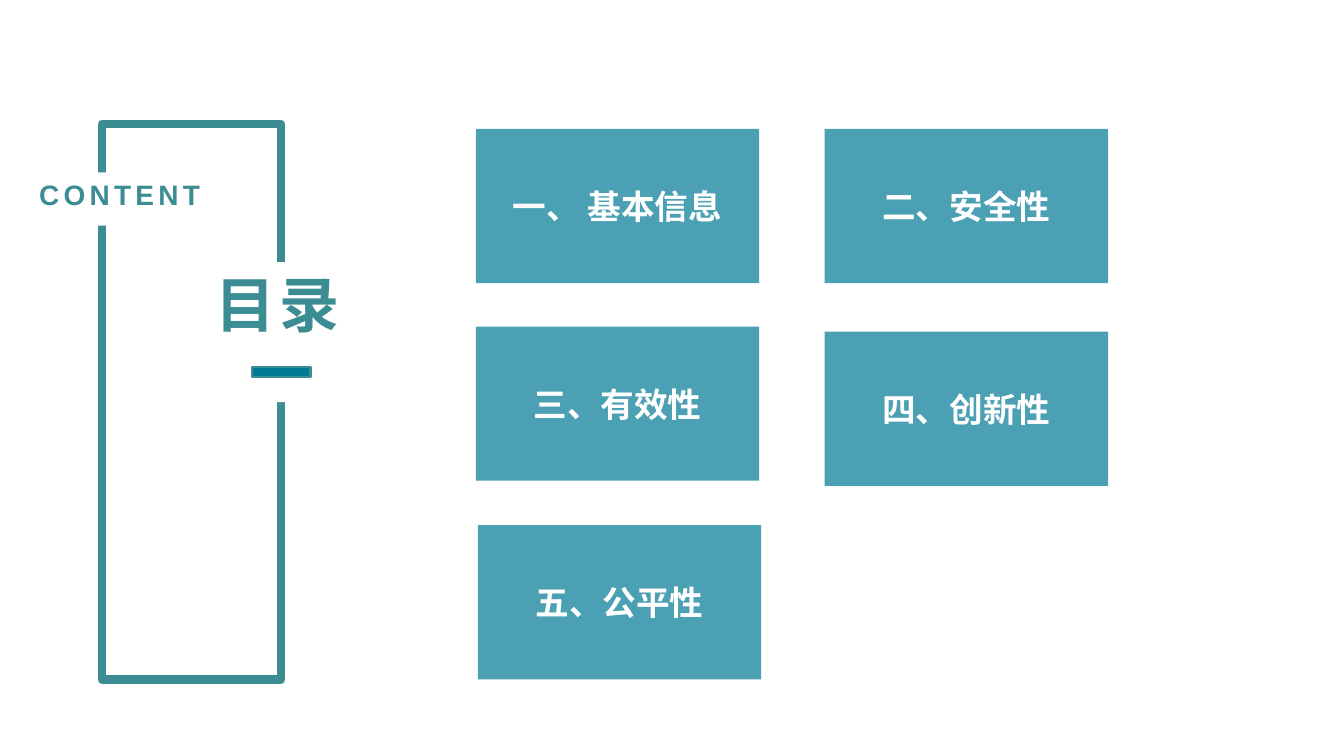
import dataclasses

import pptx
import pptx.dml.color
import pptx.enum.shapes
import pptx.enum.text
import pptx.oxml.ns
import pptx.util
from lxml import etree

Inches = pptx.util.Inches
Align = pptx.enum.text.PP_ALIGN
Anchor = pptx.enum.text.MSO_ANCHOR


@dataclasses.dataclass(frozen=True)
class Theme:
    accent: str = "3C8C93"
    card: str = "007993"
    white: str = "FFFFFF"
    chinese: str = "Noto Sans CJK SC"
    latin: str = "Arial"
    title_size: float = 42.9
    card_size: float = 24
    label_size: float = 20
    letter_spacing: float = 3
    card_opacity: int = 70


def add_child(parent, tag, **attributes):
    return etree.SubElement(parent, pptx.oxml.ns.qn(tag), **attributes)


def rgb(color):
    return pptx.dml.color.RGBColor.from_string(color)


class ContentsSlide:
    def __init__(self, presentation, theme):
        self.theme = theme
        self.slide = presentation.slides.add_slide(presentation.slide_layouts[5])

    def rectangle(self, box, fill=None, line=None, width=1.0, opacity=100):
        shape = self.slide.shapes.add_shape(
            pptx.enum.shapes.MSO_SHAPE.RECTANGLE, *map(Inches, box))
        shape.shadow.inherit = False
        self.fill(shape, fill, opacity)
        if line:
            shape.line.color.rgb = rgb(line)
            shape.line.width = pptx.util.Pt(width)
            add_child(shape.line._get_or_add_ln(), "a:round")
        else:
            shape.line.fill.background()
        return shape

    def fill(self, shape, color, opacity=100):
        if color is None:
            shape.fill.background()
            return
        shape.fill.solid()
        shape.fill.fore_color.rgb = rgb(color)
        if opacity < 100:
            color_node = shape._element.spPr.find(".//" + pptx.oxml.ns.qn("a:srgbClr"))
            add_child(color_node, "a:alpha", val=str(opacity * 1000))

    def set_text(self, shape, text, size, color, font, align, anchor, wrap=True, spacing=0):
        frame_format = {
            "word_wrap": wrap,
            "auto_size": pptx.enum.text.MSO_AUTO_SIZE.NONE,
            "vertical_anchor": anchor,
        }
        for name, value in frame_format.items():
            setattr(shape.text_frame, name, value)
        paragraph = shape.text_frame.paragraphs[0]
        paragraph.alignment = align
        run = paragraph.add_run()
        run.text = text
        font_format = {"name": font, "size": pptx.util.Pt(size), "bold": True}
        for name, value in font_format.items():
            setattr(run.font, name, value)
        run.font.color.rgb = rgb(color)
        properties = run._r.get_or_add_rPr()
        add_child(properties, "a:ea", typeface=font)
        if spacing:
            properties.set("spc", str(int(spacing * 100)))

    def title(self, text, box):
        """Format the title and bring it in front of the shapes drawn so far."""
        theme = self.theme
        title = self.slide.shapes.title
        for name, value in zip(("left", "top", "width", "height"), box):
            setattr(title, name, Inches(value))
        self.fill(title, theme.white)
        self.set_text(title, text, theme.title_size, theme.accent, theme.chinese,
                      Align.RIGHT, Anchor.TOP, spacing=theme.letter_spacing)
        self.slide.shapes._spTree.append(title._element)

    def label(self, text, box):
        theme = self.theme
        shape = self.rectangle(box, theme.white)
        self.set_text(shape, text, theme.label_size, theme.accent, theme.latin,
                      Align.LEFT, Anchor.TOP, wrap=False, spacing=theme.letter_spacing)

    def card(self, text, left, top):
        theme = self.theme
        shape = self.rectangle((left, top, 2.81, 1.53), theme.card,
                               opacity=theme.card_opacity)
        self.set_text(shape, text, theme.card_size, theme.white, theme.chinese,
                      Align.CENTER, Anchor.MIDDLE)


def main():
    presentation = pptx.Presentation()
    presentation.slide_width = Inches(13.33)
    presentation.slide_height = Inches(7.5)
    theme = Theme()
    contents = ContentsSlide(presentation, theme)

    contents.rectangle((1.01, 1.23, 1.78, 5.51), line=theme.accent, width=6)
    contents.title("目录", (1.69, 2.6, 1.78, 1.39))
    contents.label("CONTENT", (0.29, 1.71, 1.45, 0.53))
    contents.rectangle((2.5, 3.64, 0.58, 0.1), theme.card, theme.accent, 1.5)

    cards = [
        ("一、 基本信息", 4.72, 1.28),
        ("二、安全性", 8.18, 1.28),
        ("三、有效性", 4.72, 3.24),
        ("四、创新性", 8.18, 3.29),
        ("五、公平性", 4.74, 5.21),
    ]
    for text, left, top in cards:
        contents.card(text, left, top)

    presentation.save("out.pptx")


if __name__ == "__main__":
    main()
